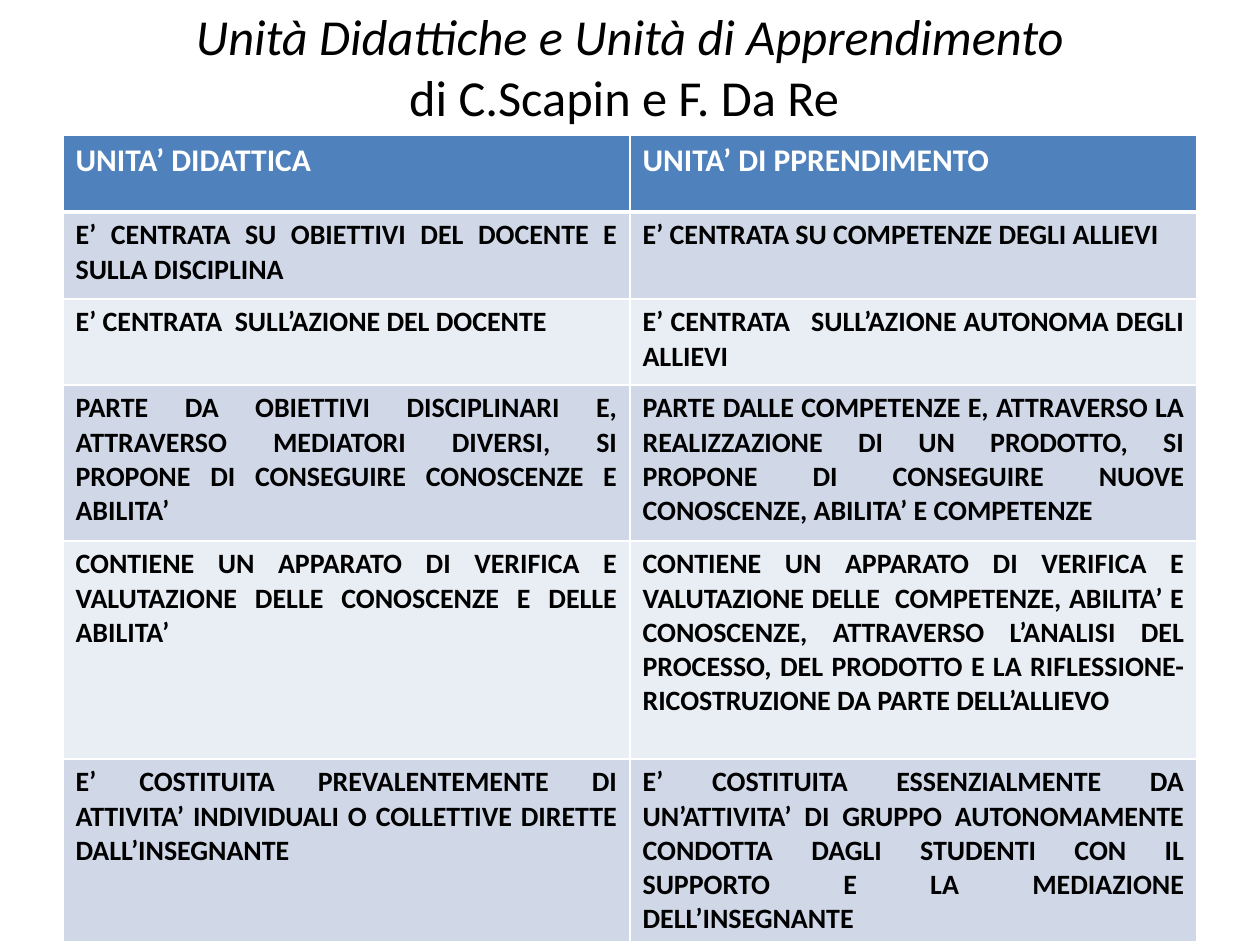
from dataclasses import dataclass

import pptx
import pptx.dml.color
import pptx.enum.text
import pptx.oxml.ns
import pptx.util
from lxml import etree

PX_PER_INCH = 126


@dataclass(frozen=True)
class Theme:
    font: str = "Calibri"
    ink: str = "000000"
    paper: str = "FFFFFF"
    header_fill: str = "4F81BD"
    bands: tuple = ("D0D8E8", "E9EDF4")
    title_size: float = 28.8
    header_size: int = 18
    body_size: int = 16
    thin_border: int = 1
    header_border: int = 3


THEME = Theme()
ALIGN = pptx.enum.text.PP_ALIGN

HEADINGS = ("UNITA’ DIDATTICA", "UNITA’ DI PPRENDIMENTO")
COMPARISONS = (
    ("E’ CENTRATA SU OBIETTIVI DEL DOCENTE E SULLA DISCIPLINA",
     "E’ CENTRATA SU COMPETENZE DEGLI ALLIEVI"),
    ("E’ CENTRATA  SULL’AZIONE DEL DOCENTE",
     "E’ CENTRATA   SULL’AZIONE AUTONOMA DEGLI ALLIEVI"),
    ("PARTE DA OBIETTIVI DISCIPLINARI E, ATTRAVERSO MEDIATORI DIVERSI, "
     "SI PROPONE DI CONSEGUIRE CONOSCENZE E ABILITA’",
     "PARTE DALLE COMPETENZE E, ATTRAVERSO LA REALIZZAZIONE DI UN PRODOTTO, "
     "SI PROPONE DI CONSEGUIRE NUOVE CONOSCENZE, ABILITA’ E COMPETENZE"),
    ("CONTIENE UN APPARATO DI VERIFICA E VALUTAZIONE DELLE CONOSCENZE "
     "E DELLE ABILITA’",
     "CONTIENE UN APPARATO DI VERIFICA E VALUTAZIONE DELLE  COMPETENZE, "
     "ABILITA’ E CONOSCENZE, ATTRAVERSO L’ANALISI DEL PROCESSO, DEL PRODOTTO "
     "E LA RIFLESSIONE-RICOSTRUZIONE DA PARTE DELL’ALLIEVO"),
    ("E’ COSTITUITA PREVALENTEMENTE DI ATTIVITA’ INDIVIDUALI O COLLETTIVE "
     "DIRETTE DALL’INSEGNANTE",
     "E’ COSTITUITA ESSENZIALMENTE DA UN’ATTIVITA’ DI GRUPPO AUTONOMAMENTE "
     "CONDOTTA DAGLI STUDENTI CON IL SUPPORTO E LA MEDIAZIONE "
     "DELL’INSEGNANTE"),
)
ROW_HEIGHTS = (77, 87, 86, 156, 218, 183)


def px(length):
    return pptx.util.Emu(round(length * 914400 / PX_PER_INCH))


def rgb(value):
    return pptx.dml.color.RGBColor.from_string(value)


def add_run(paragraph, text, size, color, bold=False, italic=False):
    run = paragraph.add_run()
    run.text = text
    run.font.name = THEME.font
    run.font.size = pptx.util.Pt(size)
    run.font.color.rgb = rgb(color)
    run.font.bold = bold
    run.font.italic = italic


def set_borders(cell, bottom, top):
    """Draw all four sides of a cell; widths are in points."""
    properties = cell._tc.get_or_add_tcPr()
    qn = pptx.oxml.ns.qn
    thin = THEME.thin_border
    for side, width in (("L", thin), ("R", thin), ("T", top), ("B", bottom)):
        line = etree.SubElement(properties, qn(f"a:ln{side}"),
                                w=str(int(pptx.util.Pt(width))))
        fill = etree.SubElement(line, qn("a:solidFill"))
        etree.SubElement(fill, qn("a:srgbClr"), val=THEME.paper)


def add_title(slide, left, top, width, height):
    title = slide.shapes.add_textbox(px(left), px(top), px(width), px(height))
    frame = title.text_frame
    frame.word_wrap = True
    frame.vertical_anchor = pptx.enum.text.MSO_ANCHOR.MIDDLE
    paragraph = frame.paragraphs[0]
    paragraph.alignment = ALIGN.CENTER
    add_run(paragraph, "Unità Didattiche e Unità di Apprendimento",
            THEME.title_size, THEME.ink, italic=True)
    paragraph.add_line_break()
    add_run(paragraph, "di C.Scapin e F. Da Re ", THEME.title_size, THEME.ink)


def add_comparison(slide, left, top, width):
    rows = (HEADINGS,) + COMPARISONS
    table = slide.shapes.add_table(
        len(rows), len(HEADINGS), px(left), px(top), px(width),
        px(sum(ROW_HEIGHTS))).table
    for column in table.columns:
        column.width = px(width / len(HEADINGS))

    for row_index, (texts, height) in enumerate(zip(rows, ROW_HEIGHTS)):
        table.rows[row_index].height = px(height)
        is_header = row_index == 0
        if is_header:
            fill, color, size = THEME.header_fill, THEME.paper, THEME.header_size
        else:
            fill = THEME.bands[(row_index - 1) % len(THEME.bands)]
            color, size = THEME.ink, THEME.body_size

        for column_index, text in enumerate(texts):
            cell = table.cell(row_index, column_index)
            set_borders(
                cell,
                bottom=THEME.header_border if is_header else THEME.thin_border,
                top=THEME.header_border if row_index == 1 else THEME.thin_border)
            cell.fill.solid()
            cell.fill.fore_color.rgb = rgb(fill)
            paragraph = cell.text_frame.paragraphs[0]
            paragraph.alignment = ALIGN.LEFT if is_header else ALIGN.JUSTIFY
            add_run(paragraph, text, size, color, bold=True)


def main():
    presentation = pptx.Presentation()
    presentation.slide_width = px(1260)
    presentation.slide_height = px(945)
    slide = presentation.slides.add_slide(presentation.slide_layouts[6])

    # Title with the authors on its second line
    add_title(slide, 63, 2, 1134, 128)
    # Side-by-side comparison of the two kinds of unit
    add_comparison(slide, 63, 135, 1134)

    presentation.save("out.pptx")


if __name__ == "__main__":
    main()
